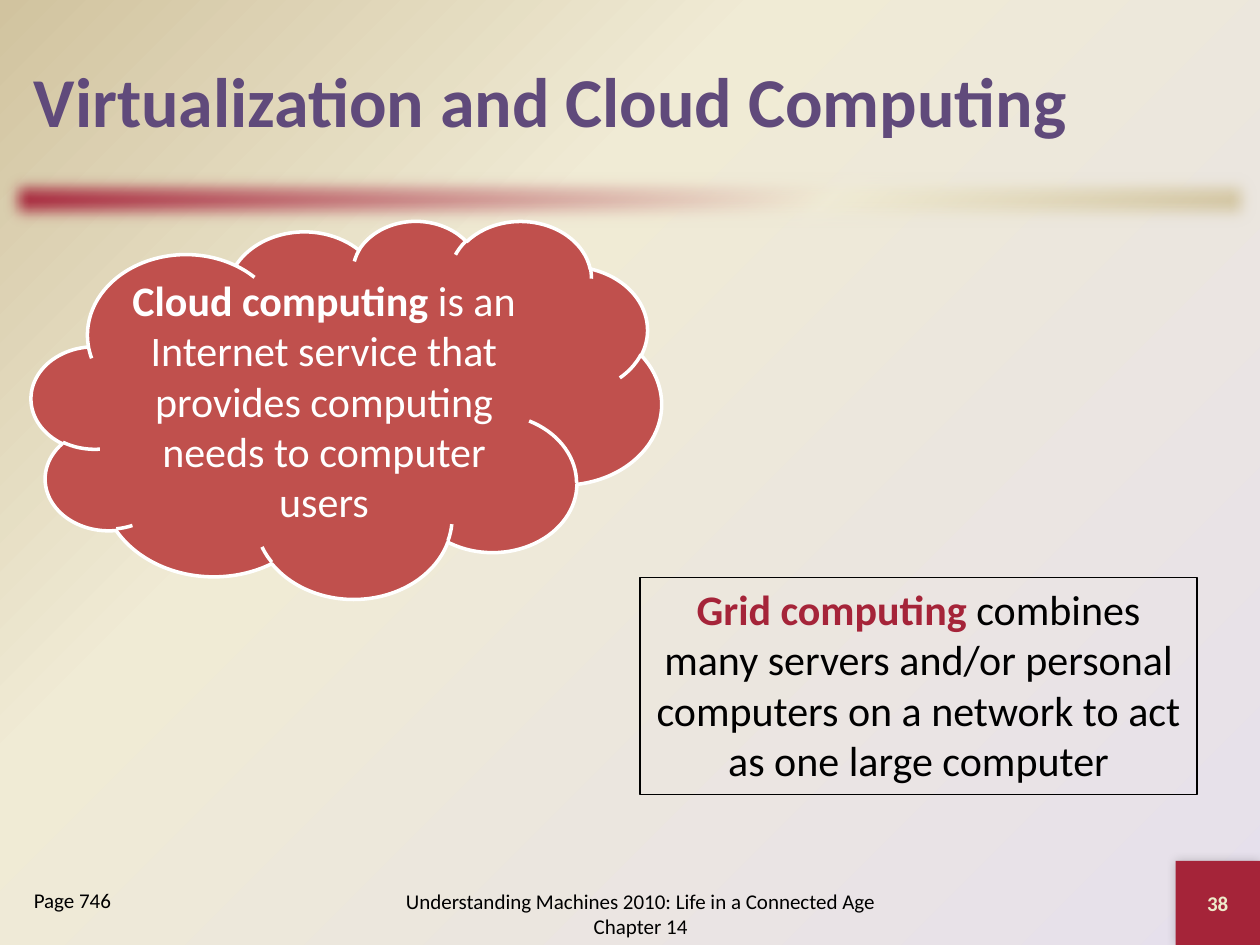
import pptx
import pptx.util
import pptx.dml.color
import pptx.enum.shapes
import pptx.enum.text
import pptx.oxml
import pptx.oxml.ns

WIDTH, HEIGHT = 10, 7.5
FONT = "Calibri"
COLORS = {
    "crimson": "A52439", "cream": "F0EBD5", "sand": "D1C39F", "lilac": "E6E0EC",
    "purple": "604A7B", "pale": "EEEBCA", "red": "C0504D",
    "white": "FFFFFF", "black": "000000",
}
SHAPES = pptx.enum.shapes.MSO_SHAPE
ALIGN = pptx.enum.text.PP_ALIGN
ANCHOR = pptx.enum.text.MSO_ANCHOR

# Content: runs are (text, color, bold)
TITLE = [("Virtualization and Cloud Computing", "purple", True)]
CLOUD = [("Cloud computing", "white", True),
         (" is an Internet service that provides computing needs to computer users", "white", False)]
GRID = [("Grid computing ", "crimson", True),
        ("combines many servers and/or personal computers on a network "
         "to act as one large computer", "black", False)]
FOOTER = [("Understanding Machines 2010: Life in a Connected Age Chapter 14", "black", False)]
NUMBER = [("38", "pale", True)]
PAGE = [("Page 746", "black", False)]

# Places as shares of the slide: left, top, width, height
BAR_BOX = (0, 0.178, 1, 0.066)
NUMBER_BOX = (0.933, 0.911, 0.067, 0.089)
CLOUD_BOX = (0.025, 0.233, 0.5, 0.4)
GRID_BOX = (0.508, 0.611, 0.442, 0.23)
TEXTS = [  # box, runs, size, alignment, anchor
    ((0.017, 0.022, 0.967, 0.167), TITLE, 40, ALIGN.LEFT, ANCHOR.MIDDLE),
    ((0.3, 0.933, 0.417, 0.067), FOOTER, 12, ALIGN.CENTER, ANCHOR.MIDDLE),
    (NUMBER_BOX, NUMBER, 12, ALIGN.CENTER, ANCHOR.MIDDLE),
    ((0.017, 0.933, 0.183, 0.067), PAGE, 12, ALIGN.LEFT, ANCHOR.TOP),
]


def color(name):
    return pptx.dml.color.RGBColor.from_string(COLORS[name])


def place(box):
    scales = (WIDTH, HEIGHT, WIDTH, HEIGHT)
    return [pptx.util.Inches(share * scale) for share, scale in zip(box, scales)]


def element(tag, attributes="", inner=""):
    namespace = pptx.oxml.ns.nsdecls("a")
    return pptx.oxml.parse_xml(f"<a:{tag} {namespace} {attributes}>{inner}</a:{tag}>")


def set_gradient(fill, properties, names, direction):
    """Swap a solid fill for a gradient with stops at 0, 65 and 100 percent."""
    fill.solid()
    stops = "".join(
        f'<a:gs pos="{position}000"><a:srgbClr val="{COLORS[name]}"/></a:gs>'
        for position, name in zip((0, 65, 100), names))
    solid = properties.find(pptx.oxml.ns.qn("a:solidFill"))
    properties.replace(solid, element(
        "gradFill", 'rotWithShape="1"', f"<a:gsLst>{stops}</a:gsLst>{direction}"))


def add_text(shape, runs, size, alignment, anchor):
    frame = shape.text_frame
    frame.word_wrap = True
    frame.vertical_anchor = anchor
    paragraph = frame.paragraphs[0]
    paragraph.alignment = alignment
    for text, name, bold in runs:
        run = paragraph.add_run()
        run.text = text
        run.font.name = FONT
        run.font.size = pptx.util.Pt(size)
        run.font.bold = bold
        run.font.color.rgb = color(name)


def add_shape(slide, kind, box, fill=None, line=None, weight=0):
    shape = slide.shapes.add_shape(kind, *place(box))
    shape.shadow.inherit = False
    if fill:
        shape.fill.solid()
        shape.fill.fore_color.rgb = color(fill)
    else:
        shape.fill.background()
    if line:
        shape.line.color.rgb = color(line)
        shape.line.width = pptx.util.Pt(weight)
    else:
        shape.line.fill.background()
    return shape


def set_effect(shape, effect):
    effects = shape._element.spPr.find(pptx.oxml.ns.qn("a:effectLst"))
    effects.append(effect)


def main():
    presentation = pptx.Presentation()
    presentation.slide_width = pptx.util.Inches(WIDTH)
    presentation.slide_height = pptx.util.Inches(HEIGHT)
    slide = presentation.slides.add_slide(presentation.slide_layouts[6])

    # Background glow from the lower right corner
    fill = slide.background.fill
    fill.solid()
    properties = slide._element.cSld.find(".//" + pptx.oxml.ns.qn("p:bgPr"))
    set_gradient(fill, properties, ("lilac", "cream", "sand"),
                 '<a:path path="circle"><a:fillToRect l="100000" t="100000"/></a:path>')

    # Soft-edged bar and number square
    bar = add_shape(slide, SHAPES.RECTANGLE, BAR_BOX)
    set_gradient(bar.fill, bar._element.spPr, ("crimson", "cream", "sand"),
                 '<a:lin ang="2700000" scaled="0"/>')
    set_effect(bar, element("softEdge", 'rad="127000"'))
    square = add_shape(slide, SHAPES.RECTANGLE, NUMBER_BOX, "crimson")
    set_effect(square, element(
        "outerShdw", 'blurRad="76200" dist="0" dir="13500000"',
        f'<a:srgbClr val="{COLORS["black"]}"><a:alpha val="20000"/></a:srgbClr>'))

    # Title, footer, slide number and page
    for box, runs, size, alignment, anchor in TEXTS:
        add_text(slide.shapes.add_textbox(*place(box)), runs, size, alignment, anchor)

    # Definitions
    cloud = add_shape(slide, SHAPES.CLOUD, CLOUD_BOX, "red", "white", 2)
    add_text(cloud, CLOUD, 24, ALIGN.CENTER, ANCHOR.MIDDLE)
    grid = add_shape(slide, SHAPES.RECTANGLE, GRID_BOX, None, "black", 0.75)
    add_text(grid, GRID, 24, ALIGN.CENTER, ANCHOR.TOP)
    grid.text_frame.auto_size = pptx.enum.text.MSO_AUTO_SIZE.SHAPE_TO_FIT_TEXT

    presentation.save("out.pptx")


if __name__ == "__main__":
    main()
